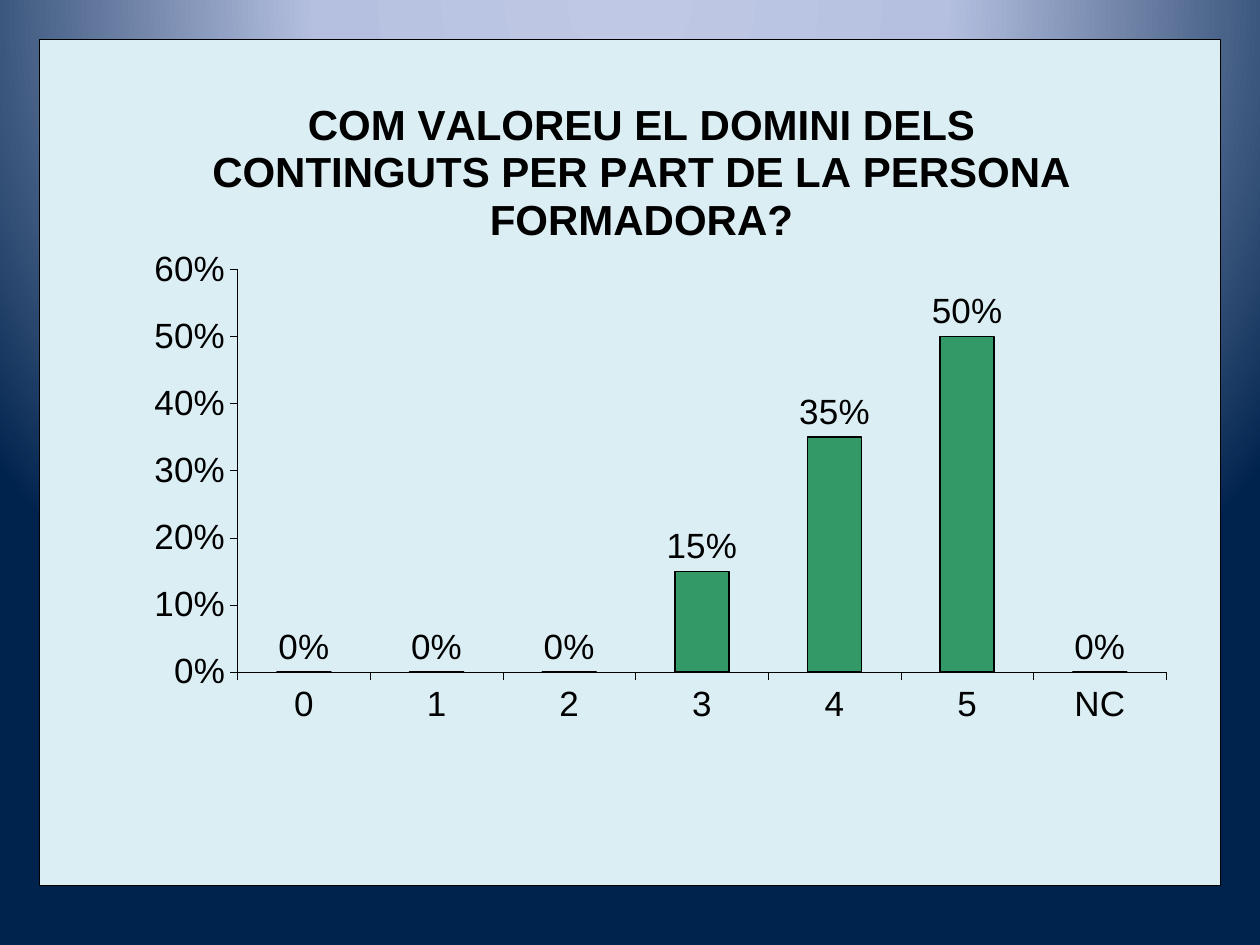
"""Build a survey slide with a column chart of ratings on a gradient background."""
from pptx import Presentation, oxml
from pptx import util as u
from pptx.chart import data as d
from pptx.dml import color as c
from pptx.enum import chart as e
from pptx.oxml import ns

COLORS = {
    "glow": "BFC9E5",
    "haze": "B5C0E0",
    "navy": "00234D",
    "panel": "DBEEF4",
    "bar": "339966",
    "ink": "000000",
}
TITLE = "COM VALOREU EL DOMINI DELS CONTINGUTS PER PART DE LA PERSONA FORMADORA?"
RATINGS = {"0": 0, "1": 0, "2": 0, "3": 0.15, "4": 0.35, "5": 0.5, "NC": 0}
BACKDROP_STOPS = [(0, "glow"), (40, "haze"), (100, "navy")]


def rgb(name):
    return c.RGBColor.from_string(COLORS[name])


def apply(target, values):
    for name, value in values.items():
        setattr(target, name, value)


def style_font(font, size, bold=False):
    apply(font, {"name": "Arial", "size": u.Pt(size), "bold": bold})
    font.color.rgb = rgb("ink")


def style_line(line, width):
    line.color.rgb = rgb("ink")
    line.width = u.Pt(width)


def paint_backdrop(page):
    page.background.fill.gradient()
    old = page.element.xpath("p:cSld/p:bg//a:gradFill")[0]
    stops = "".join(
        f'<a:gs pos="{percent * 1000}"><a:srgbClr val="{COLORS[name]}"/></a:gs>'
        for percent, name in BACKDROP_STOPS
    )
    new = oxml.parse_xml(
        f'<a:gradFill {ns.nsdecls("a")} rotWithShape="1"><a:gsLst>{stops}</a:gsLst>'
        '<a:path path="circle"><a:fillToRect l="50000" t="-80000" r="50000" b="180000"/>'
        "</a:path></a:gradFill>"
    )
    old.getparent().replace(old, new)


def place_part(part, index, target="", **fractions):
    for old in part.xpath("c:layout"):
        part.remove(old)
    inner = f'<c:layoutTarget val="{target}"/>' if target else ""
    modes = "".join(f'<c:{axis}Mode val="edge"/>' for axis in "xy")
    sizes = "".join(f'<c:{name} val="{value}"/>' for name, value in fractions.items())
    part.insert(index, oxml.parse_xml(
        f'<c:layout {ns.nsdecls("c")}><c:manualLayout>{inner}{modes}{sizes}'
        "</c:manualLayout></c:layout>"
    ))


def fill_panel(space):
    panel = oxml.parse_xml(
        f'<c:spPr {ns.nsdecls("c", "a")}>'
        f'<a:solidFill><a:srgbClr val="{COLORS["panel"]}"/></a:solidFill>'
        f'<a:ln w="{u.Pt(0.25)}"><a:solidFill><a:srgbClr val="{COLORS["ink"]}"/>'
        "</a:solidFill></a:ln></c:spPr>"
    )
    space.xpath("c:chart")[0].addnext(panel)


def add_title(chart):
    chart.has_title = True
    para = chart.chart_title.text_frame.paragraphs[0]
    span = para.add_run()
    span.text = TITLE
    style_font(span.font, 24, bold=True)


def style_axes(chart):
    for axis in (chart.category_axis, chart.value_axis):
        apply(axis, {
            "has_major_gridlines": False,
            "major_tick_mark": e.XL_TICK_MARK.OUTSIDE,
            "minor_tick_mark": e.XL_TICK_MARK.NONE,
        })
        style_line(axis.format.line, 0.25)
    apply(chart.value_axis, {
        "minimum_scale": 0, "maximum_scale": 0.6, "major_unit": 0.1,
    })
    apply(chart.value_axis.tick_labels, {
        "number_format": "0%", "number_format_is_linked": False,
    })


def style_bars(plot):
    apply(plot, {"gap_width": 146, "vary_by_categories": False, "has_data_labels": True})
    apply(plot.data_labels, {
        "show_value": True,
        "number_format": "0%",
        "number_format_is_linked": False,
        "position": e.XL_LABEL_POSITION.OUTSIDE_END,
    })
    style_font(plot.data_labels.font, 20)
    bars = plot.series[0]
    bars.format.fill.solid()
    bars.format.fill.fore_color.rgb = rgb("bar")
    style_line(bars.format.line, 1)


def add_ratings_chart(page):
    ratings = d.CategoryChartData(number_format="0%")
    ratings.categories = list(RATINGS)
    ratings.add_series("Series 1", list(RATINGS.values()))
    box = [u.Inches(length) for length in (0.31, 0.31, 9.38, 6.72)]
    chart = page.shapes.add_chart(e.XL_CHART_TYPE.COLUMN_CLUSTERED, *box, ratings).chart
    chart.has_legend = False
    style_font(chart.font, 20)
    add_title(chart)
    style_axes(chart)
    style_bars(chart.plots[0])
    space = chart.element if hasattr(chart, "element") else chart._chartSpace
    fill_panel(space)
    place_part(space.xpath("c:chart/c:title")[0], 1, x=0.14, y=0.06)
    place_part(space.xpath("c:chart/c:plotArea")[0], 0, "inner",
               x=0.168, y=0.272, w=0.786, h=0.476)


def main():
    deck = Presentation()
    apply(deck, {"slide_width": u.Inches(10), "slide_height": u.Inches(7.5)})
    page = deck.slides.add_slide(deck.slide_layouts[6])
    paint_backdrop(page)
    add_ratings_chart(page)
    deck.save("out.pptx")


if __name__ == "__main__":
    main()
